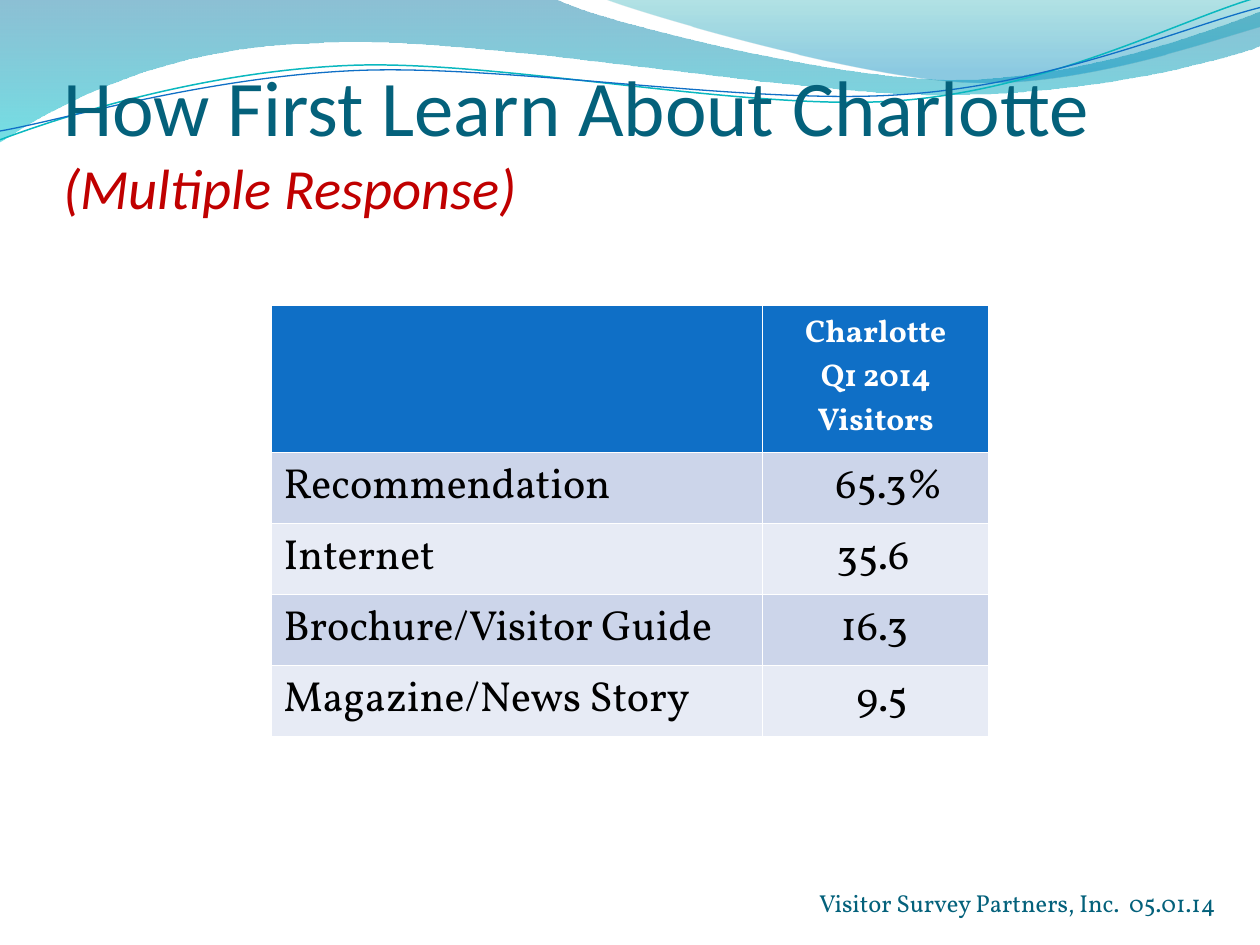
import pptx
import pptx.util
import pptx.dml.color
import pptx.enum.text
import pptx.oxml
import pptx.oxml.ns

Inches, Pt = pptx.util.Inches, pptx.util.Pt
ALIGN, ANCHOR = pptx.enum.text.PP_ALIGN, pptx.enum.text.MSO_ANCHOR
NS = pptx.oxml.ns.nsdecls("a")
SERIF, SANS = "Vollkorn", "Calibri"
TEAL, BLUE, WHITE, BLACK = "04617B", "0F6FC6", "FFFFFF", "000000"

# Each curve holds two control points and an end point, in inches
BAND = [(0, 0), (4.4, -0.01),
        (4.76, 0.17, 6.64, 0.63, 7.58, 0.63), (8.53, 0.63, 9.58, 0.26, 10, 0.09),
        (10.01, 0.36),
        (9.83, 0.44, 8.7, 0.76, 7.46, 0.75), (6.22, 0.75, 3.82, 0.28, 2.57, 0.34),
        (1.29, 0.36, 0.46, 0.83, -0.01, 1.13), (0, 0)]
CREST = [(4.79, -0.01),
         (5.09, 0.11, 6.82, 0.62, 7.69, 0.65), (8.56, 0.69, 9.61, 0.32, 10, 0.21),
         (10, 0), (4.79, -0.01)]
TEAL_WAVE = [(0, 1.11),
             (0.48, 0.93, 1.58, 0.57, 2.77, 0.52), (3.95, 0.47, 5.93, 0.89, 7.13, 0.8),
             (8.33, 0.71, 9.38, 0.15, 9.98, -0.02)]
BLUE_WAVE = [(0, 1.04),
             (0.47, 0.96, 1.64, 0.61, 2.83, 0.56), (4.03, 0.51, 5.97, 0.84, 7.17, 0.75),
             (8.36, 0.67, 9.41, 0.21, 10, 0.06)]

ROWS = [("Recommendation", "65.3%", 0.81), ("Internet", "35.6", 0.82),
        ("Brochure/Visitor Guide", "16.3", 0.82), ("Magazine/News Story", "9.5", 0.82)]


def rgb(color):
    return pptx.dml.color.RGBColor.from_string(color)


def add_run(p, text, size, color, font=SERIF, bold=False, italic=False):
    r = p.add_run()
    r.text = text
    r.font.size, r.font.name = Pt(size), font
    r.font.bold, r.font.italic = bold, italic
    r.font.color.rgb = rgb(color)


def add_outline(s, x, y, path, close):
    points = [(Inches(x + part[i]), Inches(y + part[i + 1]))
              for part in path for i in range(0, len(part), 2)]
    builder = s.shapes.build_freeform(*points[0])
    builder.add_line_segments(points[1:], close=close)
    sp = builder.convert_to_shape()
    sp.shadow.inherit = False
    # Join each run of three points into one Bezier curve
    segments = iter(sp._element.xpath(".//a:lnTo"))
    for part in path[1:]:
        first = next(segments)
        if len(part) == 6:
            curve = pptx.oxml.parse_xml(f"<a:cubicBezTo {NS}/>")
            first.addprevious(curve)
            for segment in (first, next(segments), next(segments)):
                curve.append(segment[0])
                segment.getparent().remove(segment)
    return sp


def add_waves(s, x, y):
    # Filled bands: position, colour and opacity of each stop
    for path, stops in ((BAND, [(0, "0074A1", 45), (1, "00C6CF", 55)]),
                        (CREST, [(0, "00A1A9", 30), (0.8, "008BBF", 45)])):
        sp = add_outline(s, x, y, path, True)
        sp.line.fill.background()
        sp.fill.gradient()
        sp.fill.gradient_angle = 270
        for stop, (position, color, _) in zip(sp.fill.gradient_stops, stops):
            stop.position = position
            stop.color.rgb = rgb(color)
        for clr, (_, _, opacity) in zip(sp._element.spPr.xpath(".//a:srgbClr"), stops):
            clr.append(pptx.oxml.parse_xml(f'<a:alpha {NS} val="{opacity * 1000}"/>'))
    # Thin lines
    for path, color, width in ((TEAL_WAVE, "0AB8BF", 0.85), (BLUE_WAVE, BLUE, 0.75)):
        sp = add_outline(s, x, y, path, False)
        sp.fill.background()
        sp.line.color.rgb = rgb(color)
        sp.line.width = Pt(width)


def add_title(s, x, y, w, h):
    sp = s.shapes.title
    s.shapes._spTree.append(sp._element)  # in front of the waves
    sp.left, sp.top, sp.width, sp.height = (Inches(v) for v in (x, y, w, h))
    tf = sp.text_frame
    tf.auto_size = pptx.enum.text.MSO_AUTO_SIZE.NONE
    tf.word_wrap = True
    tf.vertical_anchor = ANCHOR.BOTTOM
    tf.margin_left = tf.margin_right = tf.margin_bottom = 0
    tf.margin_top = Inches(0.05)
    p = tf.paragraphs[0]
    p.alignment = ALIGN.LEFT
    add_run(p, "How First Learn About Charlotte ", 45, TEAL, SANS)
    add_run(p, "(Multiple Response)", 32.4, "C00000", SANS, italic=True)


def add_footer(s, x, y, w, h):
    tf = s.shapes.add_textbox(*(Inches(v) for v in (x, y, w, h))).text_frame
    tf.word_wrap = True
    p = tf.paragraphs[0]
    p.alignment = ALIGN.RIGHT
    add_run(p, "Visitor Survey Partners, Inc.  05.01.14", 14, TEAL)


def fill_cell(cell, color):
    cell.fill.solid()
    cell.fill.fore_color.rgb = rgb(color)


def add_visitor_table(s, x, y, w, h):
    header_h, label_w = 1.17, 3.9
    # The default table style draws the white rules
    table = s.shapes.add_table(len(ROWS) + 1, 2, *(Inches(v) for v in (x, y, w, h))).table
    table.columns[0].width = Inches(label_w)
    table.columns[1].width = Inches(w - label_w)
    table.rows[0].height = Inches(header_h)

    # Header
    for col in range(2):
        fill_cell(table.cell(0, col), BLUE)
    head = table.cell(0, 1)
    head.vertical_anchor = ANCHOR.MIDDLE
    p = head.text_frame.paragraphs[0]
    p.alignment = ALIGN.CENTER
    for i, line in enumerate(("Charlotte", "Q1 2014", "Visitors")):
        if i:
            p.add_line_break()
        add_run(p, line, 18, WHITE, bold=True)

    # Sources, with values lined up on the decimal point
    for i, (label, value, tab) in enumerate(ROWS, 1):
        table.rows[i].height = Inches((h - header_h) / len(ROWS))
        for col, text in enumerate((label, "\t" + value)):
            cell = table.cell(i, col)
            fill_cell(cell, "CCD5EA" if i % 2 else "E7EBF5")
            p = cell.text_frame.paragraphs[0]
            if col:
                p._p.get_or_add_pPr().append(pptx.oxml.parse_xml(
                    f'<a:tabLst {NS}><a:tab pos="{Inches(tab)}" algn="dec"/></a:tabLst>'))
            add_run(p, text, 24, BLACK)


def main():
    prs = pptx.Presentation()
    prs.slide_width, prs.slide_height = Inches(10), Inches(7.5)
    s = prs.slides.add_slide(prs.slide_layouts[5])
    add_waves(s, 0, 0)
    add_footer(s, 6.33, 7, 3.42, 0.34)
    add_title(s, 0.5, 0.5, 9, 1.25)
    add_visitor_table(s, 2.15, 2.42, 5.7, 3.29)
    prs.save("out.pptx")


if __name__ == "__main__":
    main()
